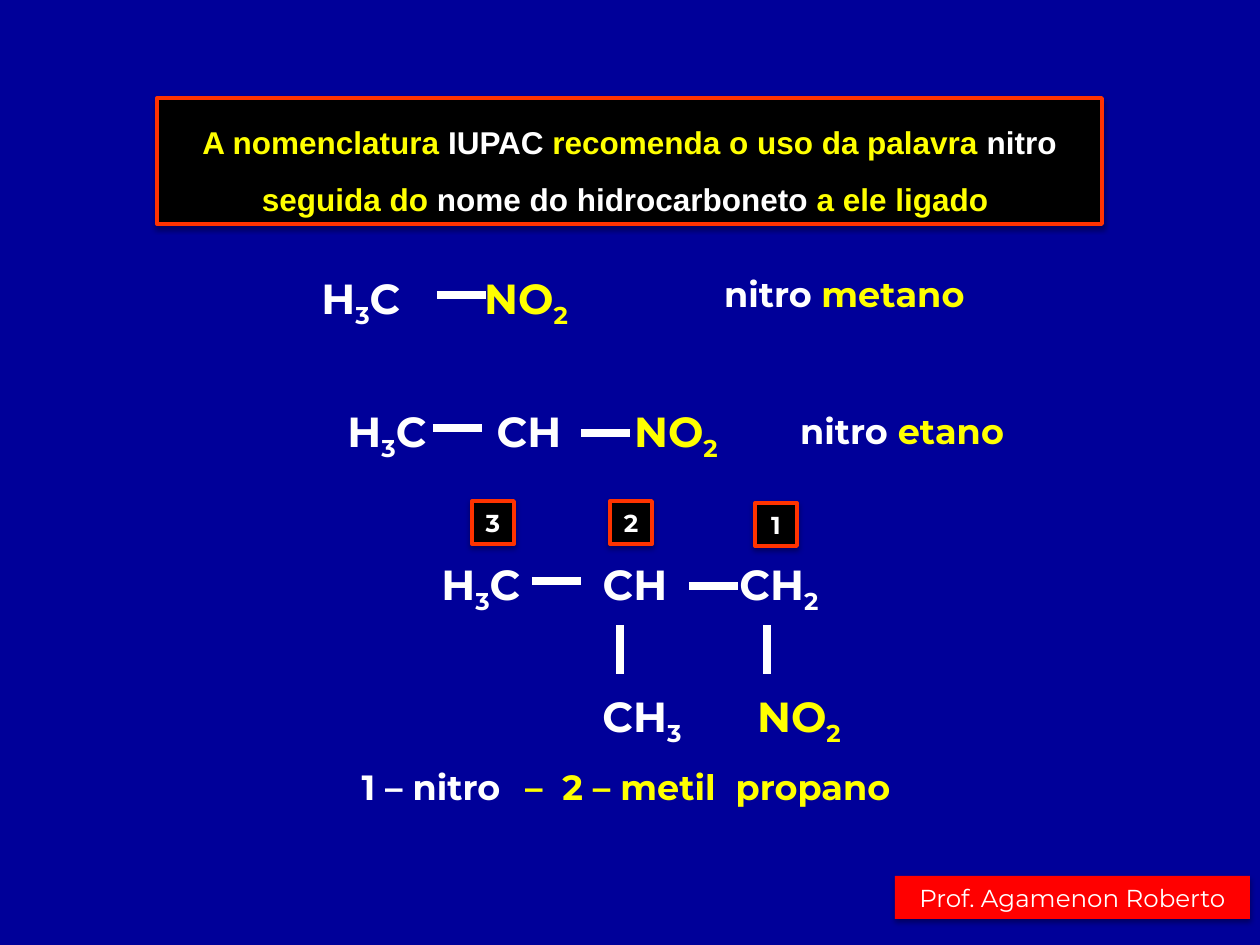
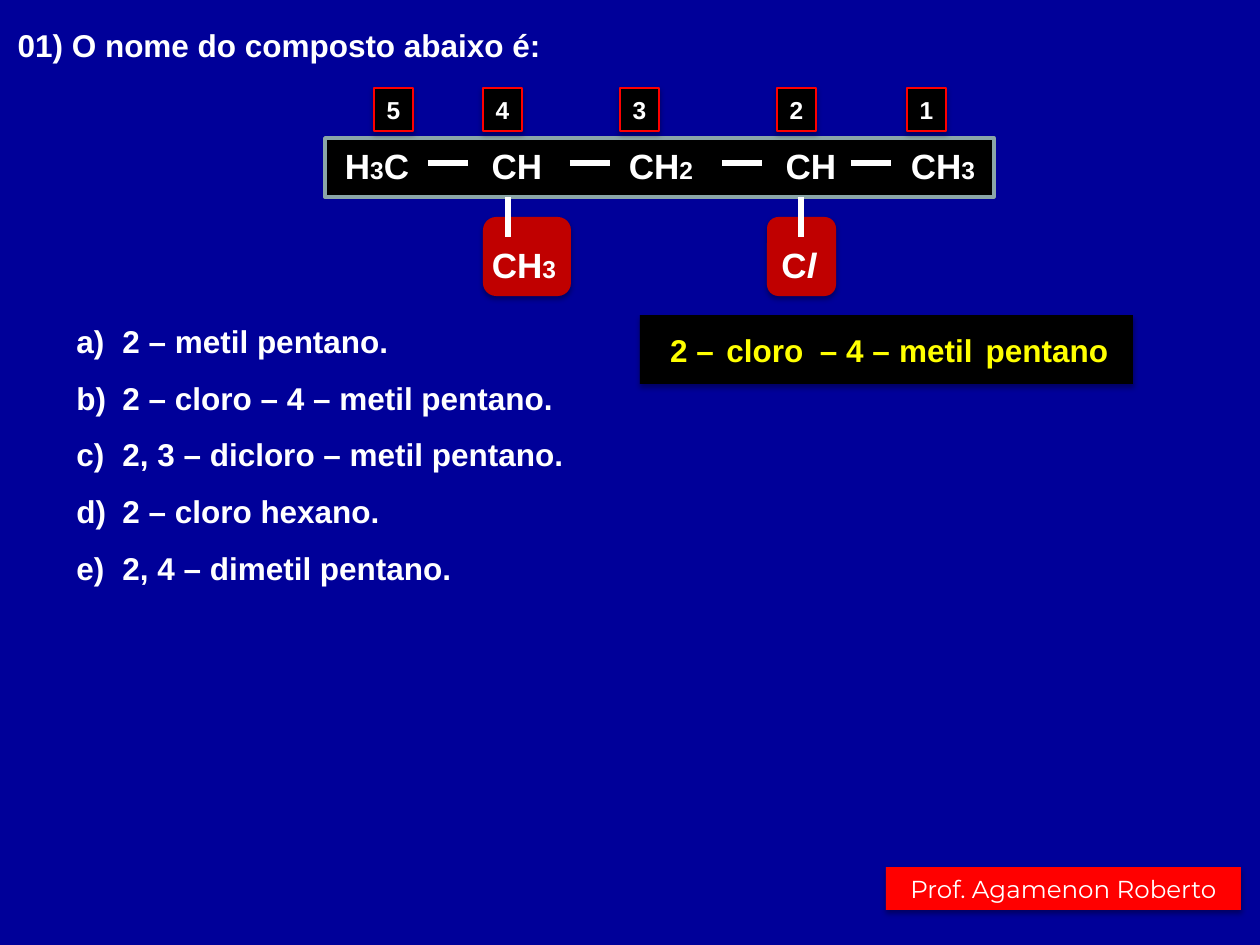
import dataclasses
import itertools

import pptx
import pptx.dml.color
import pptx.enum.shapes
import pptx.enum.text
import pptx.oxml
import pptx.oxml.ns
import pptx.util

EMU_PER_PX = 914400 / 126
RECT = pptx.enum.shapes.MSO_SHAPE.RECTANGLE
ROUNDED = pptx.enum.shapes.MSO_SHAPE.ROUNDED_RECTANGLE
CENTER = pptx.enum.text.PP_ALIGN.CENTER
LEFT = pptx.enum.text.PP_ALIGN.LEFT
MIDDLE = pptx.enum.text.MSO_ANCHOR.MIDDLE
TOP = pptx.enum.text.MSO_ANCHOR.TOP


@dataclasses.dataclass(frozen=True)
class Style:
    font: str
    size: int
    color: str
    bold: bool = True

    def colored(self, color):
        return dataclasses.replace(self, color=color)


@dataclasses.dataclass(frozen=True)
class Theme:
    background: str = "000099"
    panel: str = "000000"
    text: str = "FFFFFF"
    accent: str = "FFFF00"
    border: str = "FF3300"
    signal: str = "FF0000"
    branch: str = "C00000"
    chain_border: str = "8AA6A8"
    statement: Style = Style("Arial", 18, "FFFFFF")
    name: Style = Style("Montserrat", 20, "FFFFFF")
    formula: Style = Style("Montserrat", 24, "FFFFFF")
    locant: Style = Style("Montserrat", 14, "FFFFFF")
    credit: Style = Style("Montserrat", 14, "FFFFFF", False)
    chain: Style = Style("Arial", 20, "FFFFFF")
    chain_locant: Style = Style("Arial", 14, "FFFFFF")
    chain_digit: int = 14


THEME = Theme()


def px(length):
    return round(length * EMU_PER_PX)


def rgb(color):
    return pptx.dml.color.RGBColor.from_string(color)


def format_run(run, style):
    run.font.name = style.font
    run.font.size = pptx.util.Pt(style.size)
    run.font.bold = style.bold
    run.font.color.rgb = rgb(style.color)


def add_runs(paragraph, pieces):
    for words, style in pieces:
        run = paragraph.add_run()
        run.text = words
        format_run(run, style)


def set_frame(frame, align=CENTER, anchor=MIDDLE, wrap=False):
    frame.word_wrap = wrap
    frame.auto_size = pptx.enum.text.MSO_AUTO_SIZE.NONE
    frame.vertical_anchor = anchor
    for paragraph in frame.paragraphs:
        paragraph.alignment = align


def add_effects(element, shadow):
    xml = "<a:effectLst %s/>" % pptx.oxml.ns.nsdecls("a")
    if shadow:
        xml = (
            '<a:effectLst %s><a:outerShdw blurRad="39400" dist="22900" dir="5400000" rotWithShape="0">'
            '<a:srgbClr val="000000"><a:alpha val="35000"/></a:srgbClr>'
            "</a:outerShdw></a:effectLst>" % pptx.oxml.ns.nsdecls("a")
        )
    element.spPr.append(pptx.oxml.parse_xml(xml))


def paint(panel, fill, border=None, border_width=2.25, shadow=True):
    panel.fill.solid()
    panel.fill.fore_color.rgb = rgb(fill)
    if border:
        panel.line.color.rgb = rgb(border)
        panel.line.width = pptx.util.Pt(border_width)
    else:
        panel.line.fill.background()
    add_effects(panel._element, shadow)


def add_panel(slide, kind, box, fill, **look):
    panel = slide.shapes.add_shape(kind, *map(px, box))
    paint(panel, fill, **look)
    return panel


def add_tag(slide, words, box, style, fill, **look):
    frame = add_panel(slide, RECT, box, fill, **look).text_frame
    frame.text = words
    set_frame(frame)
    format_run(frame.paragraphs[0].runs[0], style)


def add_credit(slide, left, top):
    add_tag(slide, "Prof. Agamenon Roberto", (left, top, 355, 43), THEME.credit, THEME.signal)


def add_label(slide, words, middle, top, width, style, height=55):
    box = slide.shapes.add_textbox(*map(px, (middle - width / 2, top, width, height)))
    frame = box.text_frame
    frame.text = words
    set_frame(frame, anchor=TOP)
    format_run(frame.paragraphs[0].runs[0], style)


def add_formula(slide, formula, middle, top, width, style, digit_size=None):
    box = slide.shapes.add_textbox(*map(px, (middle - width / 2, top, width, 64)))
    paragraph = box.text_frame.paragraphs[0]
    pieces = ["".join(part) for _, part in itertools.groupby(formula, lambda c: "l" if c == "l" else c.isdigit())]
    add_runs(paragraph, [(piece, style) for piece in pieces])
    for run in paragraph.runs:
        if run.text == "l":
            run.font.italic = True
        elif run.text.isdigit() and digit_size:
            run.font.size = pptx.util.Pt(digit_size)
        elif run.text.isdigit():
            run._r.get_or_add_rPr().set("baseline", "-25000")
    set_frame(box.text_frame, anchor=TOP)


def add_bond(slide, left, top, length, width, vertical=False):
    right, bottom = (left, top + length) if vertical else (left + length, top)
    bond = slide.shapes.add_connector(
        pptx.enum.shapes.MSO_CONNECTOR.STRAIGHT, *map(px, (left, top, right, bottom))
    )
    bond.line.color.rgb = rgb(THEME.text)
    bond.line.width = pptx.util.Pt(width)
    add_effects(bond._element, False)


def add_titled_slide(deck, title_box):
    slide = deck.slides.add_slide(deck.slide_layouts[5])
    title = slide.shapes.title
    title.left, title.top, title.width, title.height = map(px, title_box)
    return slide, title


def build_nomenclature(deck):
    slide, rule = add_titled_slide(deck, (157, 98, 945, 126))
    paint(rule, THEME.panel, border=THEME.border)
    words = (
        "A nomenclatura", " IUPAC", " recomenda o uso da palavra ", "nitro ",
        "seguida do ", "nome do hidrocarboneto", " a ele ligado ",
    )
    colors = itertools.cycle((THEME.accent, THEME.text))
    paragraph = rule.text_frame.paragraphs[0]
    add_runs(paragraph, [(part, THEME.statement.colored(color)) for part, color in zip(words, colors)])
    paragraph.line_spacing = 1.5
    set_frame(rule.text_frame, wrap=True)

    nitro_group = THEME.formula.colored(THEME.accent)
    for formula, middle, top, style in (
        ("H3C", 361, 266, THEME.formula),
        ("NO2", 526, 266, nitro_group),
        ("H3C", 387, 399, THEME.formula),
        ("CH", 529, 399, THEME.formula),
        ("NO2", 676, 399, nitro_group),
        ("H3C", 481, 552, THEME.formula),
        ("CH", 635, 552, THEME.formula),
        ("CH2", 779, 552, THEME.formula),
        ("CH3", 642, 684, THEME.formula),
        ("NO2", 799, 684, nitro_group),
    ):
        add_formula(slide, formula, middle, top, 112, style)

    for left, top in ((437, 295), (433, 428), (581, 433), (532, 581), (689, 586)):
        add_bond(slide, left, top, 49, 4.5)
    for left in (620, 767):
        add_bond(slide, left, 625, 49, 4.5, vertical=True)

    chain_name = THEME.name.colored(THEME.accent)
    for words, middle, top, width, style in (
        ("nitro", 768, 266, 116, THEME.name),
        ("metano", 893, 266, 171, chain_name),
        ("nitro", 844, 403, 116, THEME.name),
        ("etano", 951, 403, 136, chain_name),
        ("1 – nitro", 431, 759, 181, THEME.name),
        ("–", 534, 759, 45, chain_name),
        ("2 – metil", 639, 759, 182, chain_name),
        ("propano", 813, 759, 182, chain_name),
    ):
        add_label(slide, words, middle, top, width, style)

    for number, left, top in (("3", 472, 501), ("2", 610, 501), ("1", 755, 503)):
        add_tag(slide, number, (left, top, 42, 43), THEME.locant, THEME.panel, border=THEME.border)
    add_credit(slide, 895, 876)


def add_options(slide, options):
    box = slide.shapes.add_textbox(*map(px, (64, 299, 517, 292)))
    frame = box.text_frame
    frame.text = "\n".join(f"{letter})\t{option}" for letter, option in zip("abcde", options))
    set_frame(frame, align=LEFT, wrap=True)
    for paragraph in frame.paragraphs:
        paragraph.line_spacing = 1.5
        format_run(paragraph.runs[0], THEME.statement)
        properties = paragraph._p.get_or_add_pPr()
        properties.set("marL", str(px(46)))
        properties.set("indent", str(-px(46)))


def build_question(deck):
    slide, question = add_titled_slide(deck, (5, 20, 554, 50))
    question.text_frame.text = "01) O nome do composto abaixo é:"
    set_frame(question.text_frame, align=LEFT)
    format_run(question.text_frame.paragraphs[0].runs[0], THEME.statement)

    add_panel(slide, RECT, (640, 315, 493, 69), THEME.panel)
    for left, width in ((767, 69), (483, 88)):
        add_panel(slide, ROUNDED, (left, 217, width, 79), THEME.branch)
    add_panel(slide, RECT, (325, 138, 669, 59), THEME.panel,
              border=THEME.chain_border, border_width=2, shadow=False)

    add_options(slide, (
        "2 – metil pentano.",
        "2 – cloro – 4 – metil pentano.",
        "2, 3 – dicloro – metil pentano.",
        "2 – cloro hexano.",
        "2, 4 – dimetil pentano.",
    ))

    for formula, middle, top in (
        ("H3C", 377, 138), ("CH", 517, 138), ("CH2", 661, 138), ("CH", 811, 138),
        ("CH3", 943, 138), ("CH3", 524, 237), ("Cl", 799, 237),
    ):
        add_formula(slide, formula, middle, top, 91, THEME.chain, THEME.chain_digit)
    for left in (428, 570, 722, 851):
        add_bond(slide, left, 163, 40, 3)
    for left in (508, 801):
        add_bond(slide, left, 197, 40, 3, vertical=True)

    for number, left in zip("54321", (374, 483, 620, 777, 907)):
        add_tag(slide, number, (left, 88, 39, 43), THEME.chain_locant, THEME.panel,
                border=THEME.signal, border_width=1.5)

    for words, middle, width in (
        ("2 –", 692, 72), ("cloro", 765, 103), ("– 4 –", 855, 98), ("metil", 936, 100), ("pentano", 1047, 149),
    ):
        add_label(slide, words, middle, 325, width, THEME.statement.colored(THEME.accent), height=50)
    add_credit(slide, 886, 867)


def main():
    deck = pptx.Presentation()
    deck.slide_width, deck.slide_height = px(1260), px(945)
    backdrop = deck.slide_master.background.fill
    backdrop.solid()
    backdrop.fore_color.rgb = rgb(THEME.background)
    build_nomenclature(deck)
    build_question(deck)
    deck.save("out.pptx")


if __name__ == "__main__":
    main()
